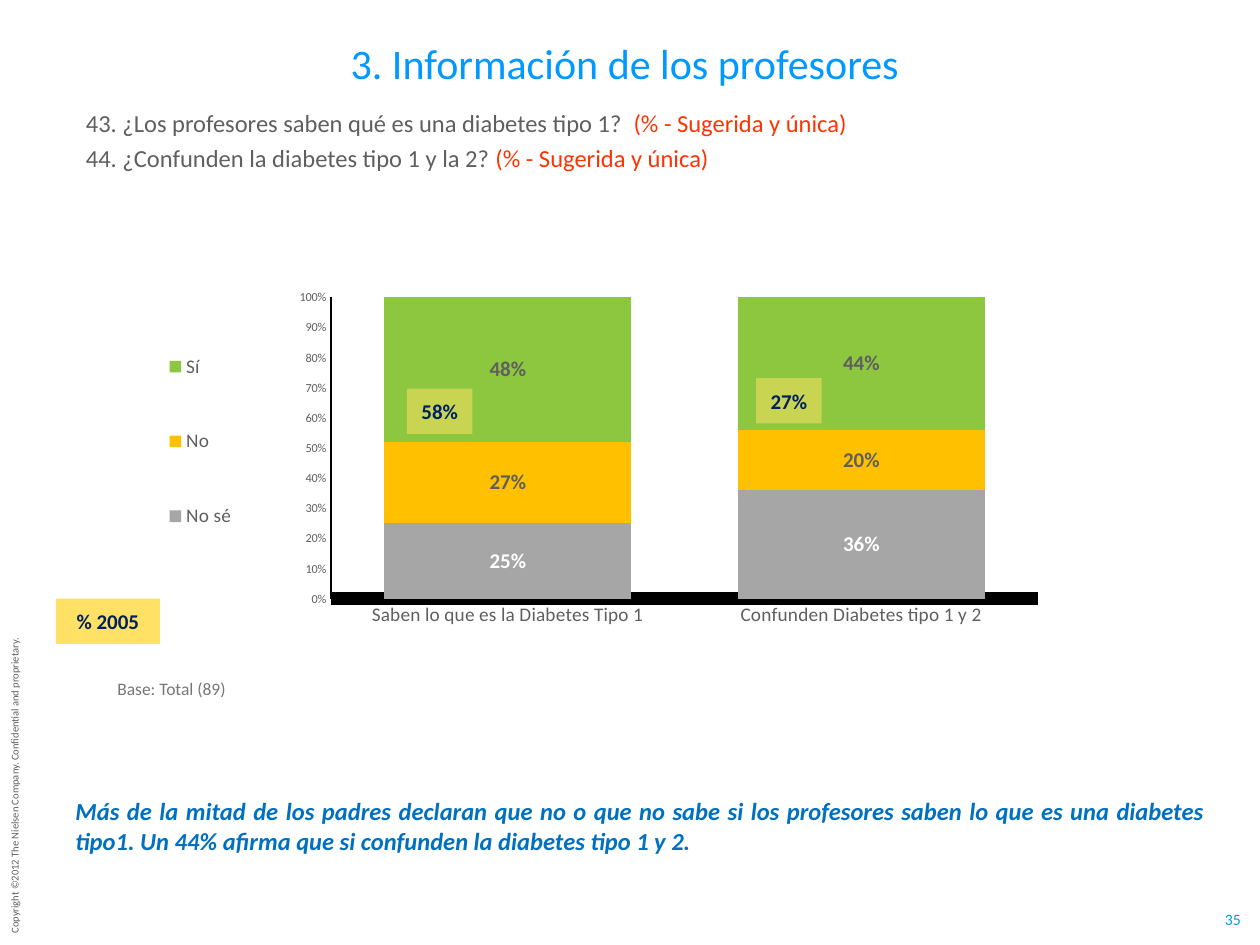
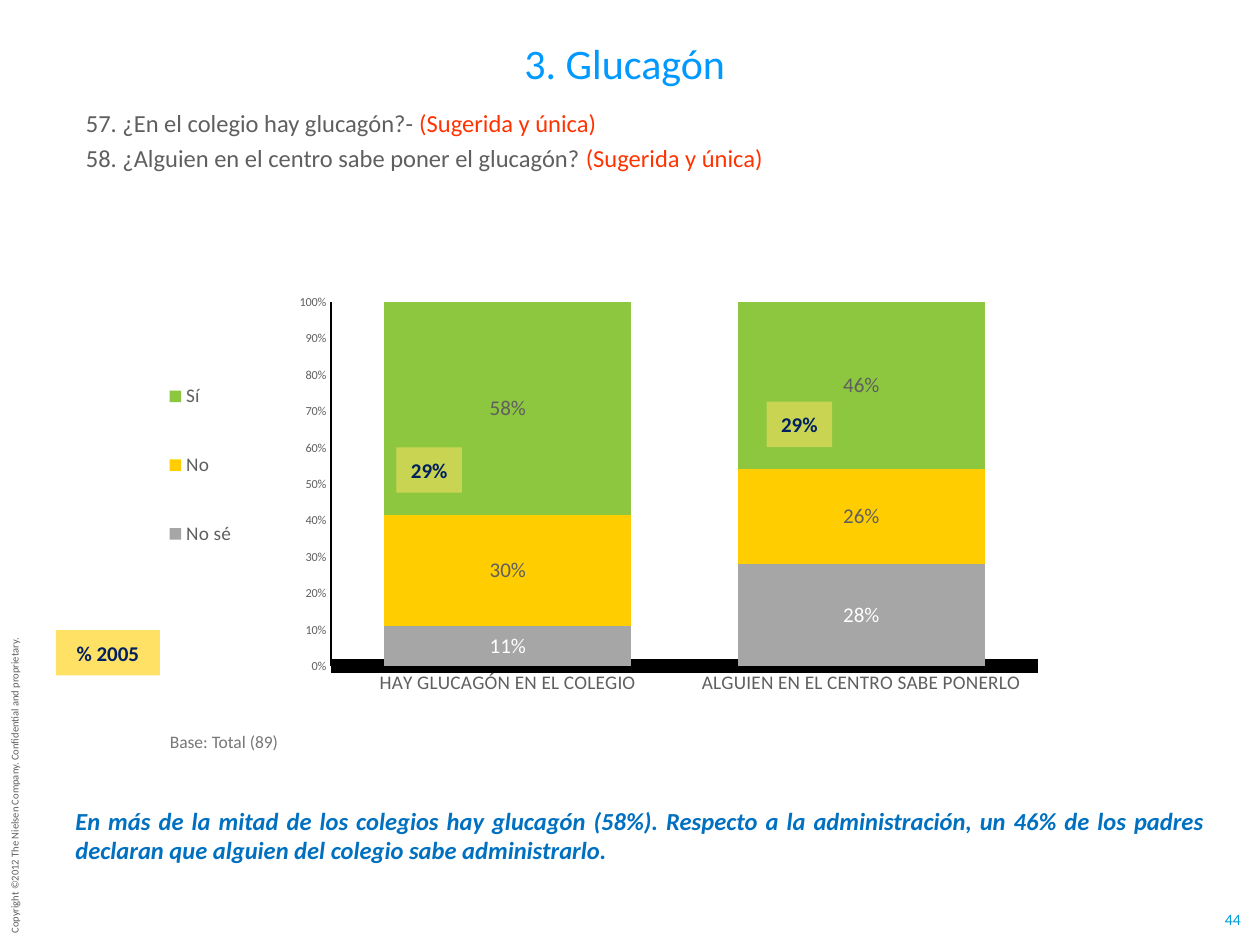
from lxml.etree import SubElement
from pptx import Presentation
from pptx.chart.data import CategoryChartData
from pptx.dml.color import RGBColor
from pptx.enum.chart import XL_CHART_TYPE, XL_LABEL_POSITION, XL_LEGEND_POSITION, XL_TICK_MARK
from pptx.enum.shapes import MSO_SHAPE
from pptx.enum.text import MSO_ANCHOR, MSO_AUTO_SIZE, PP_ALIGN
from pptx.oxml import parse_xml
from pptx.oxml.ns import nsdecls, qn
from pptx.util import Pt

FONT = "Calibri"
COLORS = {
    "title": "0099FF", "question": "5F5F5F", "answer_type": "FF3300", "note": "0070C0",
    "base": "777777", "page": "009DD9", "badge": "FFE265", "badge_text": "002060",
    "gray": "A6A6A6", "green": "8DC63F", "white": "FFFFFF", "black": "000000",
}
COLORS = {name: RGBColor.from_string(value) for name, value in COLORS.items()}

SLIDES = [
    {
        "title": "3. Información de los profesores",
        "page": "35",
        "questions": [
            ("43. ¿Los profesores saben qué es una diabetes tipo 1?  ", "(% - Sugerida y única)"),
            ("44. ¿Confunden la diabetes tipo 1 y la 2?", " (% - Sugerida y única)"),
        ],
        "chart_box": (78, 132, 522, 276.5),
        "plot": (0.213, 0.137, 0.774, 0.623),
        "categories": ["Saben lo que es la Diabetes Tipo 1", "Confunden Diabetes tipo 1 y 2"],
        "values": [(0.25, 0.36), (0.27, 0.20), (0.48, 0.44)],
        "no_color": "FFC000",
        "bold_labels": True,
        "base_box": (60, 384, 96, 19.4),
        "note": "Más de la mitad de los padres declaran que no o que no sabe si los profesores "
                "saben lo que es una diabetes tipo1. Un 44% afirma que si confunden la diabetes tipo 1 y 2.",
        "note_top": 451.5,
        "badges": [("58%", 232.5, 222), ("27%", 432, 216)],
        "year_top": 342,
    },
    {
        "title": "3. Glucagón",
        "page": "44",
        "questions": [
            ("57. ¿En el colegio hay glucagón?-", " (Sugerida y única)"),
            ("58. ¿Alguien en el centro sabe poner el glucagón? ", "(Sugerida y única)"),
        ],
        "chart_box": (78, 156, 522, 252.5),
        "plot": (0.213, 0.065, 0.774, 0.825),
        "categories": ["HAY GLUCAGÓN EN EL COLEGIO", "ALGUIEN EN EL CENTRO SABE PONERLO"],
        "values": [(0.11, 0.28), (0.30, 0.26), (0.58, 0.46)],
        "no_color": "FFCD00",
        "bold_labels": False,
        "base_box": (90, 414, 108, 19.4),
        "note": "En más de la mitad de los colegios hay glucagón (58%). Respecto a la administración, "
                "un 46% de los padres declaran que alguien del colegio sabe administrarlo.",
        "note_top": 456.8,
        "badges": [("29%", 226.5, 255.6), ("29%", 438, 229.5)],
        "year_top": 360,
    },
]


def write_text(shape, text, size, color, align=PP_ALIGN.LEFT, anchor=MSO_ANCHOR.TOP, wrap=True,
               bold=False, italic=False):
    frame = shape.text_frame
    frame.text = text
    frame.word_wrap = wrap
    frame.auto_size = MSO_AUTO_SIZE.NONE
    frame.vertical_anchor = anchor
    paragraph = frame.paragraphs[0]
    paragraph.alignment = align
    font = paragraph.runs[0].font
    font.name, font.size, font.bold, font.italic = FONT, Pt(size), bold, italic
    font.color.rgb = COLORS[color]


def make_layout(box, inner=False):
    target = '<c:layoutTarget val="inner"/>' if inner else ""
    modes = "".join(f'<c:{side}Mode val="edge"/>' for side in "xy")
    sides = "".join(f'<c:{side} val="{value}"/>' for side, value in zip("xywh", box))
    return parse_xml(f'<c:layout {nsdecls("c")}><c:manualLayout>{target}{modes}{sides}'
                     "</c:manualLayout></c:layout>")


presentation = Presentation()
presentation.slide_width, presentation.slide_height = Pt(720), Pt(540)

for content in SLIDES:
    slide = presentation.slides.add_slide(presentation.slide_layouts[5])
    shapes = slide.shapes

    title = shapes.title
    title.left, title.top, title.width, title.height = Pt(60), Pt(18), Pt(594), Pt(36)
    write_text(title, content["title"], 24, "title", PP_ALIGN.CENTER)

    copyright_line = shapes.add_textbox(Pt(-85), Pt(440), Pt(186.5), Pt(14.4))
    copyright_line.rotation = 270
    write_text(copyright_line, "Copyright ©2012 The Nielsen Company. Confidential and proprietary.",
               6, "question", wrap=False)

    page_number = shapes.add_textbox(Pt(699), Pt(520), Pt(11), Pt(11))
    write_text(page_number, content["page"], 9, "page", PP_ALIGN.CENTER, MSO_ANCHOR.MIDDLE, wrap=False)
    frame = page_number.text_frame
    frame.margin_left = frame.margin_right = frame.margin_top = frame.margin_bottom = 0

    question_box = shapes.add_textbox(Pt(42), Pt(58.3), Pt(678), Pt(39.6))
    frame = question_box.text_frame
    frame.word_wrap = True
    for index, parts in enumerate(content["questions"]):
        paragraph = frame.add_paragraph() if index else frame.paragraphs[0]
        if index:
            paragraph.space_before = Pt(3)
        properties = paragraph._p.get_or_add_pPr()
        properties.set("marL", str(Pt(7.2)))
        properties.set("indent", str(Pt(-7.2)))
        for text, color in zip(parts, ("question", "answer_type")):
            run = paragraph.add_run()
            run.text = text
            run.font.name, run.font.size = FONT, Pt(14)
            run.font.color.rgb = COLORS[color]

    data = CategoryChartData(number_format="0%")
    data.categories = content["categories"]
    for name, values in zip(("No sé", "No", "Sí"), content["values"]):
        data.add_series(name, values)
    chart = shapes.add_chart(XL_CHART_TYPE.COLUMN_STACKED_100,
                             *[Pt(value) for value in content["chart_box"]], data).chart
    chart.has_title = False
    chart.font.name, chart.font.size = FONT, Pt(10)
    chart.font.color.rgb = COLORS["question"]

    plot = chart.plots[0]
    plot.gap_width, plot.overlap, plot.vary_by_categories = 43, 100, False
    fills = (COLORS["gray"], RGBColor.from_string(content["no_color"]), COLORS["green"])
    for series, fill, label_color in zip(plot.series, fills, ("white", "question", "question")):
        series.format.fill.solid()
        series.format.fill.fore_color.rgb = fill
        labels = series.data_labels
        labels.show_value = True
        labels.number_format, labels.number_format_is_linked = "0%", False
        labels.position = XL_LABEL_POSITION.CENTER
        labels.font.name, labels.font.size = FONT, Pt(12)
        labels.font.bold = content["bold_labels"]
        labels.font.color.rgb = COLORS[label_color]

    for axis, size, line_width in ((chart.category_axis, 11, 7.75), (chart.value_axis, 7, 0.75)):
        axis.has_major_gridlines = False
        axis.major_tick_mark = axis.minor_tick_mark = XL_TICK_MARK.NONE
        axis.tick_labels.font.size = Pt(size)
        axis.tick_labels.font.color.rgb = COLORS["question"]
        axis.format.line.width = Pt(line_width)
        axis.format.line.color.rgb = COLORS["black"]
    chart.value_axis.tick_labels.number_format = "0%"
    chart.value_axis.tick_labels.number_format_is_linked = False
    chart.value_axis.major_unit = 0.1

    chart.has_legend = True
    legend = chart.legend
    legend.position = XL_LEGEND_POSITION.LEFT
    legend.include_in_layout = False
    legend.font.size = Pt(11)
    legend.font.color.rgb = COLORS["question"]
    plot_area = chart._chartSpace.find(".//" + qn("c:plotArea"))
    legend_element = chart._chartSpace.find(".//" + qn("c:legend"))
    for element in (plot_area, legend_element):
        for old_layout in element.findall(qn("c:layout")):
            element.remove(old_layout)
    plot_area.insert(0, make_layout(content["plot"], inner=True))
    legend_element.find(qn("c:legendPos")).addnext(make_layout((0.02, 0.15, 0.1, 0.57)))

    base = shapes.add_shape(MSO_SHAPE.RECTANGLE, *[Pt(value) for value in content["base_box"]])
    base.shadow.inherit = False
    base.fill.solid()
    base.fill.fore_color.rgb = COLORS["white"]
    base.line.fill.background()
    write_text(base, "Base: Total (89)", 10, "base")

    note = shapes.add_textbox(Pt(36), Pt(content["note_top"]), Pt(660), Pt(41))
    write_text(note, content["note"], 14, "note", PP_ALIGN.JUSTIFY, bold=True, italic=True)

    badges = [(text, left, top, 37.5, 53) for text, left, top in content["badges"]]
    badges.append(("% 2005", 31.9, content["year_top"], 59.5, 100))
    for text, left, top, width, opacity in badges:
        badge = shapes.add_shape(MSO_SHAPE.RECTANGLE, Pt(left), Pt(top), Pt(width), Pt(26))
        badge.shadow.inherit = False
        badge.fill.solid()
        badge.fill.fore_color.rgb = COLORS["badge"]
        badge.line.fill.background()
        if opacity < 100:
            fill_color = badge._element.spPr.find(".//" + qn("a:srgbClr"))
            SubElement(fill_color, qn("a:alpha")).set("val", str(opacity * 1000))
        write_text(badge, text, 12, "badge_text", PP_ALIGN.CENTER, MSO_ANCHOR.MIDDLE, wrap=False, bold=True)

presentation.save("out.pptx")
